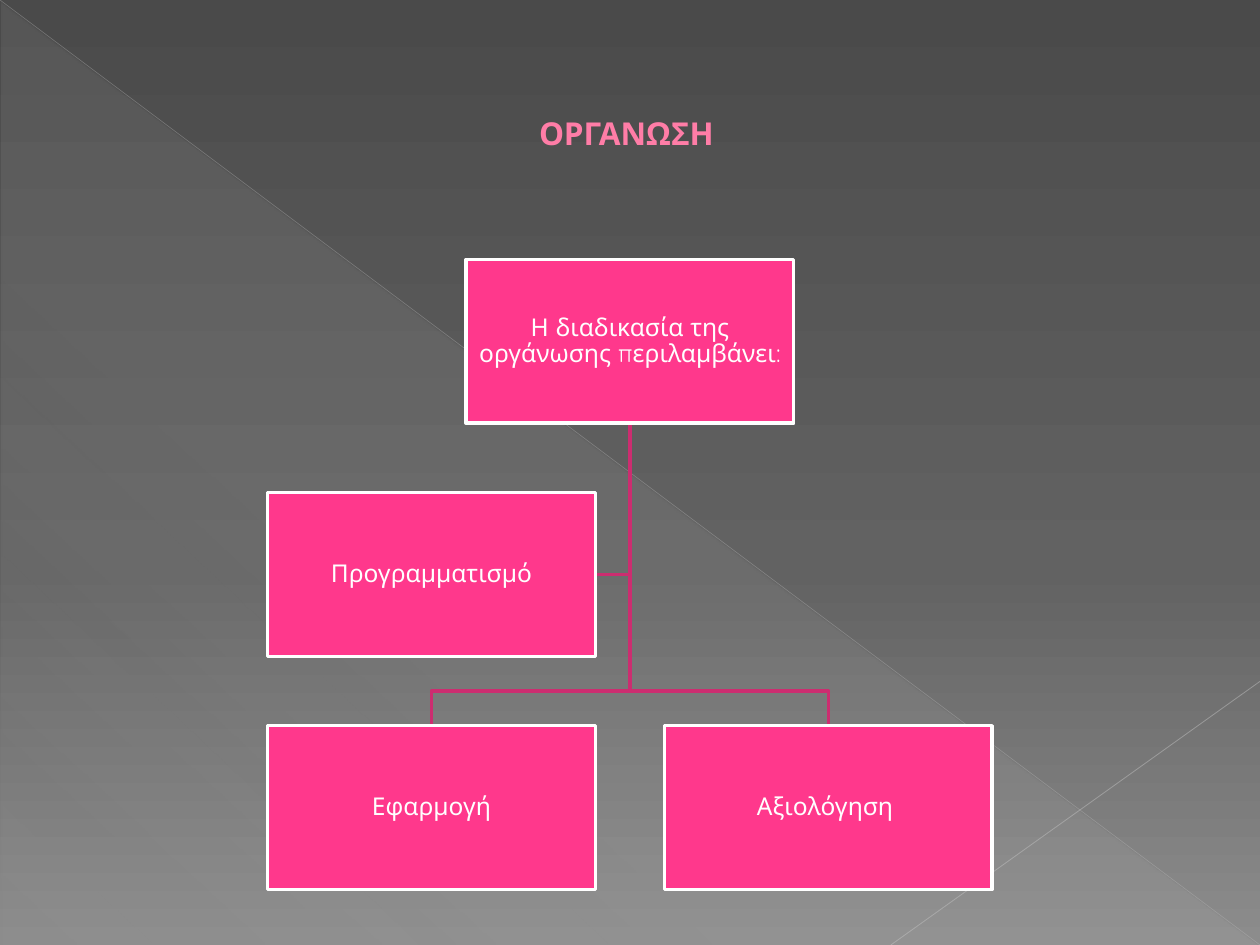
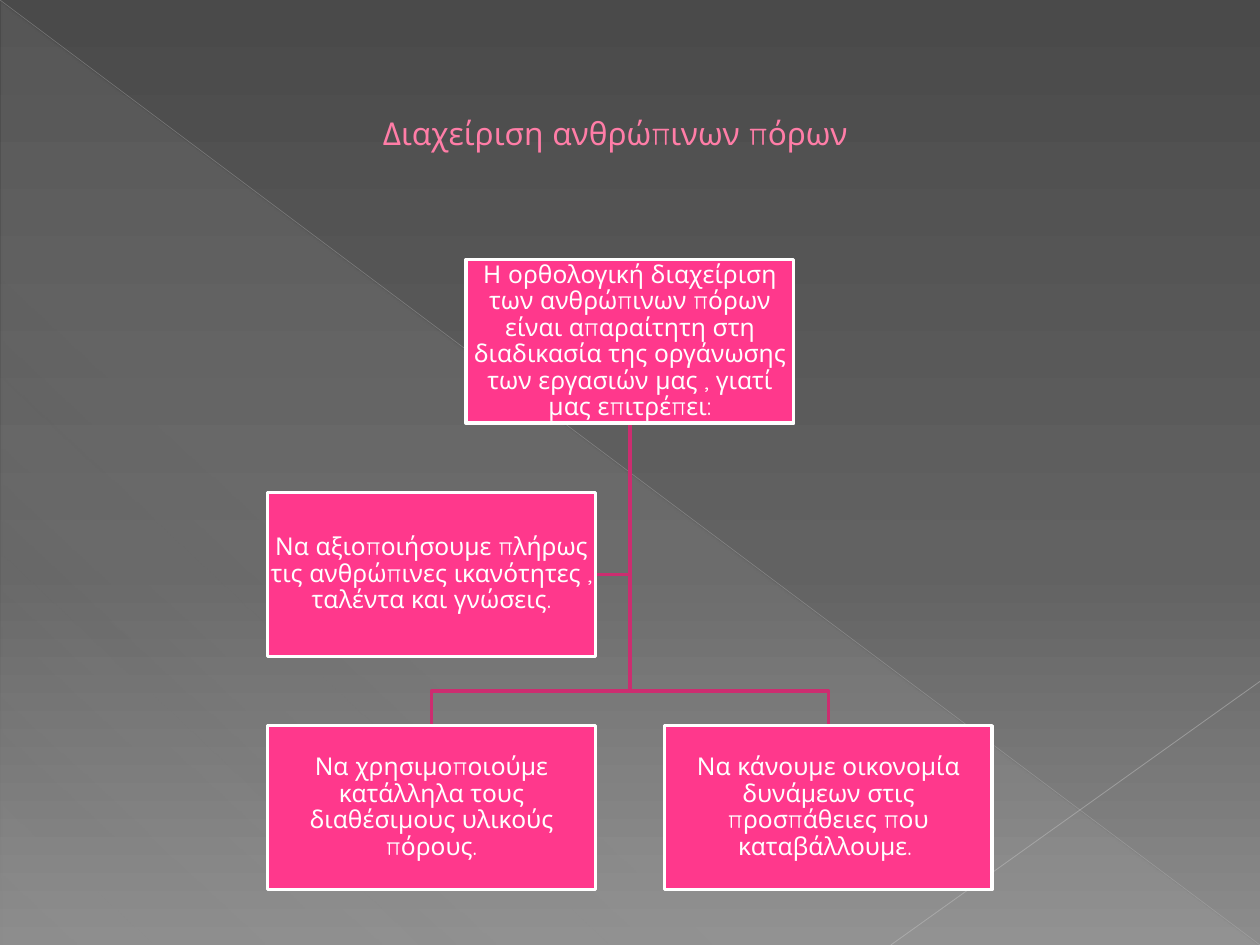
"""Builds two slides, each an organisation chart of four cards on a grey gradient."""
from lxml.etree import SubElement
from pptx import Presentation
from pptx.dml.color import RGBColor
from pptx.enum.shapes import MSO_CONNECTOR, MSO_SHAPE
from pptx.enum.text import MSO_ANCHOR, PP_ALIGN
from pptx.oxml.ns import qn
from pptx.util import Inches, Pt

COLORS = {
    "top": "4A4A4A", "middle": "626262", "bottom": "8C8C8C",
    "wedge": "D2D2D2", "diagonal": "BFBFBF", "corner": "C6C6C6",
    "title": "FF7DA7", "outline": "B12761",
    "card": "FF388C", "branch": "CC2D70", "white": "FFFFFF",
}
FONT = "Quicksand"
WIDTH, HEIGHT = 10, 7.5
CARD_WIDTH, CARD_HEIGHT = 2.6, 1.3
GAP = 0.55
COLUMN, ROW = CARD_WIDTH + GAP, CARD_HEIGHT + GAP
CENTER = WIDTH / 2
LEFT, TOP = CENTER - COLUMN / 2 - CARD_WIDTH / 2, 2.06
CARD_CELLS = [(0.5, 0), (0, 2), (1, 2), (0, 1)]

ROOT_BOTTOM = TOP + CARD_HEIGHT
LAST_TOP = TOP + 2 * ROW
FORK = LAST_TOP - GAP / 2
SIDE_MIDDLE = TOP + ROW + CARD_HEIGHT / 2
BRANCHES = [[(CENTER, ROOT_BOTTOM), (CENTER, SIDE_MIDDLE), (LEFT + CARD_WIDTH, SIDE_MIDDLE)]]
for end in (CENTER + COLUMN / 2, CENTER - COLUMN / 2):
    BRANCHES.append([(CENTER, ROOT_BOTTOM), (CENTER, FORK), (end, FORK), (end, LAST_TOP)])

RULES = [
    ((0, 0), (WIDTH, HEIGHT), "diagonal", 0.39, 35),
    ((WIDTH, 0.721 * HEIGHT), (0.707 * WIDTH, HEIGHT), "corner", 0.47, 45),
]
SLIDES = [
    {"title": "ΟΡΓΑΝΩΣΗ", "bold": True, "indent": 3.68, "cards": [
        "Η διαδικασία της οργάνωσης περιλαμβάνει:",
        "Εφαρμογή",
        "Αξιολόγηση ",
        "Προγραμματισμό",
    ]},
    {"title": "Διαχείριση ανθρώπινων πόρων", "bold": False, "indent": 2.44, "cards": [
        "Η ορθολογική διαχείριση των ανθρώπινων πόρων είναι απαραίτητη στη "
        "διαδικασία της οργάνωσης των εργασιών μας , γιατί μας επιτρέπει:",
        "Να χρησιμοποιούμε κατάλληλα τους διαθέσιμους υλικούς πόρους.",
        "Να κάνουμε οικονομία δυνάμεων στις προσπάθειες που καταβάλλουμε. ",
        "Να αξιοποιήσουμε πλήρως τις ανθρώπινες ικανότητες , ταλέντα και γνώσεις.",
    ]},
]


def write_text(shape, text, size=14, color="white", bold=False, align=PP_ALIGN.CENTER,
               inset=0.01, spacing=0.9, indent=0, outline=None):
    frame = shape.text_frame
    frame.word_wrap = True
    frame.vertical_anchor = MSO_ANCHOR.MIDDLE
    frame.margin_left = frame.margin_right = Inches(inset)
    frame.margin_top = frame.margin_bottom = Inches(inset)
    paragraph = frame.paragraphs[0]
    paragraph.alignment = align
    paragraph.line_spacing = spacing
    paragraph._p.get_or_add_pPr().set("marL", str(Inches(indent)))
    run = paragraph.add_run()
    run.text = text
    if outline:
        line = SubElement(run._r.get_or_add_rPr(), qn("a:ln"), w=str(Pt(0.5)))
        fill = SubElement(line, qn("a:solidFill"))
        SubElement(fill, qn("a:srgbClr"), val=COLORS[outline])
    run.font.name = FONT
    run.font.size = Pt(size)
    run.font.bold = bold
    run.font.color.rgb = RGBColor.from_string(COLORS[color])


def set_gradient(element, stops, angle):
    gradient = element.find(".//" + qn("a:gradFill"))
    for child in list(gradient):
        gradient.remove(child)
    stop_list = SubElement(gradient, qn("a:gsLst"))
    for position, color, opacity in stops:
        stop = SubElement(stop_list, qn("a:gs"), pos=str(position * 1000))
        tone = SubElement(stop, qn("a:srgbClr"), val=COLORS[color])
        SubElement(tone, qn("a:alpha"), val=str(opacity * 1000))
    SubElement(gradient, qn("a:lin"), ang=str(angle * 60000), scaled="0")


presentation = Presentation()
presentation.slide_width, presentation.slide_height = Inches(WIDTH), Inches(HEIGHT)

for content in SLIDES:
    slide = presentation.slides.add_slide(presentation.slide_layouts[6])
    slide.background.fill.gradient()
    set_gradient(slide._element,
                 [(0, "top", 100), (60, "middle", 100), (100, "bottom", 100)], 90)

    wedge = slide.shapes.add_shape(MSO_SHAPE.RIGHT_TRIANGLE, Inches(0.01), Inches(0.02),
                                   Inches(WIDTH - 0.02), Inches(HEIGHT - 0.02))
    wedge.shadow.inherit = False
    wedge.line.fill.background()
    wedge.fill.gradient()
    set_gradient(wedge._element, [(0, "wedge", 10), (70, "wedge", 8), (100, "wedge", 1)], 133)

    for start, finish, color, weight, opacity in RULES:
        rule = slide.shapes.add_connector(MSO_CONNECTOR.STRAIGHT,
                                          *[Inches(value) for value in start + finish])
        rule.line.color.rgb = RGBColor.from_string(COLORS[color])
        rule.line.width = Pt(weight)
        tone = rule._element.find(".//" + qn("a:srgbClr"))
        SubElement(tone, qn("a:alpha"), val=str(opacity * 1000))
        SubElement(rule._element.spPr, qn("a:effectLst"))

    title = slide.shapes.add_textbox(Inches(0.05 * WIDTH), Inches(0.29),
                                     Inches(0.9 * WIDTH), Inches(1.53))
    write_text(title, content["title"], size=18, color="title", bold=content["bold"],
               align=PP_ALIGN.LEFT, inset=0.1, spacing=1, indent=content["indent"],
               outline="outline")

    for branch in BRANCHES:
        points = [(Inches(x), Inches(y)) for x, y in branch]
        builder = slide.shapes.build_freeform(*points[0])
        builder.add_line_segments(points[1:], close=False)
        shape = builder.convert_to_shape()
        shape.shadow.inherit = False
        shape.fill.background()
        shape.line.color.rgb = RGBColor.from_string(COLORS["branch"])
        shape.line.width = Pt(2)

    for (column, row), text in zip(CARD_CELLS, content["cards"]):
        card = slide.shapes.add_shape(MSO_SHAPE.RECTANGLE,
                                      Inches(LEFT + column * COLUMN), Inches(TOP + row * ROW),
                                      Inches(CARD_WIDTH), Inches(CARD_HEIGHT))
        card.shadow.inherit = False
        card.fill.solid()
        card.fill.fore_color.rgb = RGBColor.from_string(COLORS["card"])
        card.line.color.rgb = RGBColor.from_string(COLORS["white"])
        card.line.width = Pt(2)
        write_text(card, text)

presentation.save("out.pptx")
